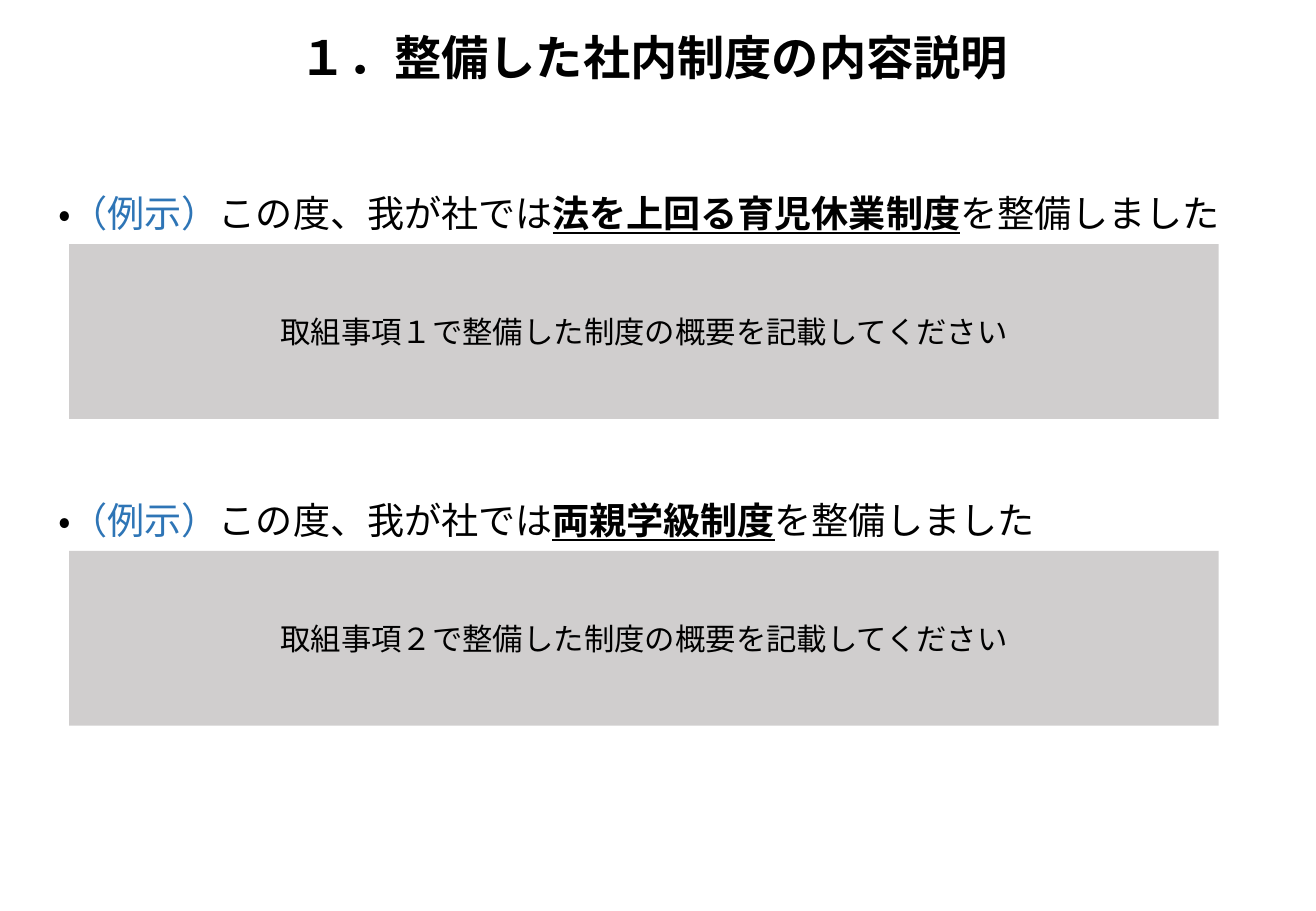
from pptx import Presentation
from pptx.dml.color import RGBColor
from pptx.enum.lang import MSO_LANGUAGE_ID as Lang
from pptx.enum.shapes import MSO_SHAPE as Shape
from pptx.enum.text import MSO_ANCHOR as Anchor, MSO_AUTO_SIZE as AutoSize, PP_ALIGN as Align
from pptx.util import Inches, Pt

# Content
TITLE = "１．整備した社内制度の内容説明"
LEAD, LABEL, TAIL = "この度、我が社では", "（例示）", "を整備しました"
SYSTEMS = [  # name, width of its heading, summary
    ("法を上回る育児休業制度", 10.08, "取組事項１で整備した制度の概要を記載してください"),
    ("両親学級制度", 8.53, "取組事項２で整備した制度の概要を記載してください"),
]
BLACK, BLUE, GREY = "000000", "2E75B6", "D0CECE"

# Layout in inches
WIDTH, HEIGHT = 10.83, 7.5
TITLE_WIDTH = 6.09
FIRST_TOP, ROW_STEP = 1.56, 2.525
HEADING_LEFT, HEADING_HEIGHT = 0.38, 0.44
PANEL_LEFT, PANEL_WIDTH, PANEL_HEIGHT, PANEL_OFFSET = 0.57, 9.46, 1.44, 0.45


def rgb(color):
    return RGBColor.from_string(color)


def add_run(p, text, size, font, color=BLACK, bold=False, underline=False):
    r = p.add_run()
    r.text = text
    f = r.font
    f.size, f.name, f.bold, f.underline = Pt(size), font, bold, underline
    f.color.rgb = rgb(color)
    f.language_id = Lang.JAPANESE


def add_line(slide, box, anchor=Anchor.TOP, before=0):
    """Add a one-line text box and return its paragraph."""
    tf = slide.shapes.add_textbox(*map(Inches, box)).text_frame
    tf.word_wrap = False
    tf.auto_size = AutoSize.SHAPE_TO_FIT_TEXT
    tf.vertical_anchor = anchor
    p = tf.paragraphs[0]
    p.line_spacing, p.space_before = 0.9, Pt(before)
    return p


def add_heading(slide, name, top, width):
    p = add_line(slide, (HEADING_LEFT, top, width, HEADING_HEIGHT), before=10)
    add_run(p, "・", 22, "Arial")
    add_run(p, LABEL, 22, "Arial", BLUE)
    add_run(p, LEAD, 22, "Arial")
    add_run(p, name, 22, "Arial", bold=True, underline=True)
    add_run(p, TAIL, 22, "Arial")


def add_panel(slide, summary, top):
    box = (PANEL_LEFT, top, PANEL_WIDTH, PANEL_HEIGHT)
    sp = slide.shapes.add_shape(Shape.RECTANGLE, *map(Inches, box))
    sp.shadow.inherit = False
    sp.fill.solid()
    sp.fill.fore_color.rgb = rgb(GREY)
    sp.line.fill.background()
    tf = sp.text_frame
    tf.word_wrap = True
    tf.vertical_anchor = Anchor.MIDDLE
    p = tf.paragraphs[0]
    p.alignment = Align.CENTER
    add_run(p, summary, 18, "Calibri")


def main():
    prs = Presentation()
    prs.slide_width, prs.slide_height = Inches(WIDTH), Inches(HEIGHT)
    slide = prs.slides.add_slide(prs.slide_layouts[6])

    # Title
    title_box = ((WIDTH - TITLE_WIDTH) / 2, 0.23, TITLE_WIDTH, 0.53)
    add_run(add_line(slide, title_box, Anchor.MIDDLE), TITLE, 28, "Arial", bold=True)

    # One heading and one panel per system
    for row, (name, width, summary) in enumerate(SYSTEMS):
        top = FIRST_TOP + row * ROW_STEP
        add_heading(slide, name, top, width)
        add_panel(slide, summary, top + PANEL_OFFSET)

    prs.save("out.pptx")


if __name__ == "__main__":
    main()
